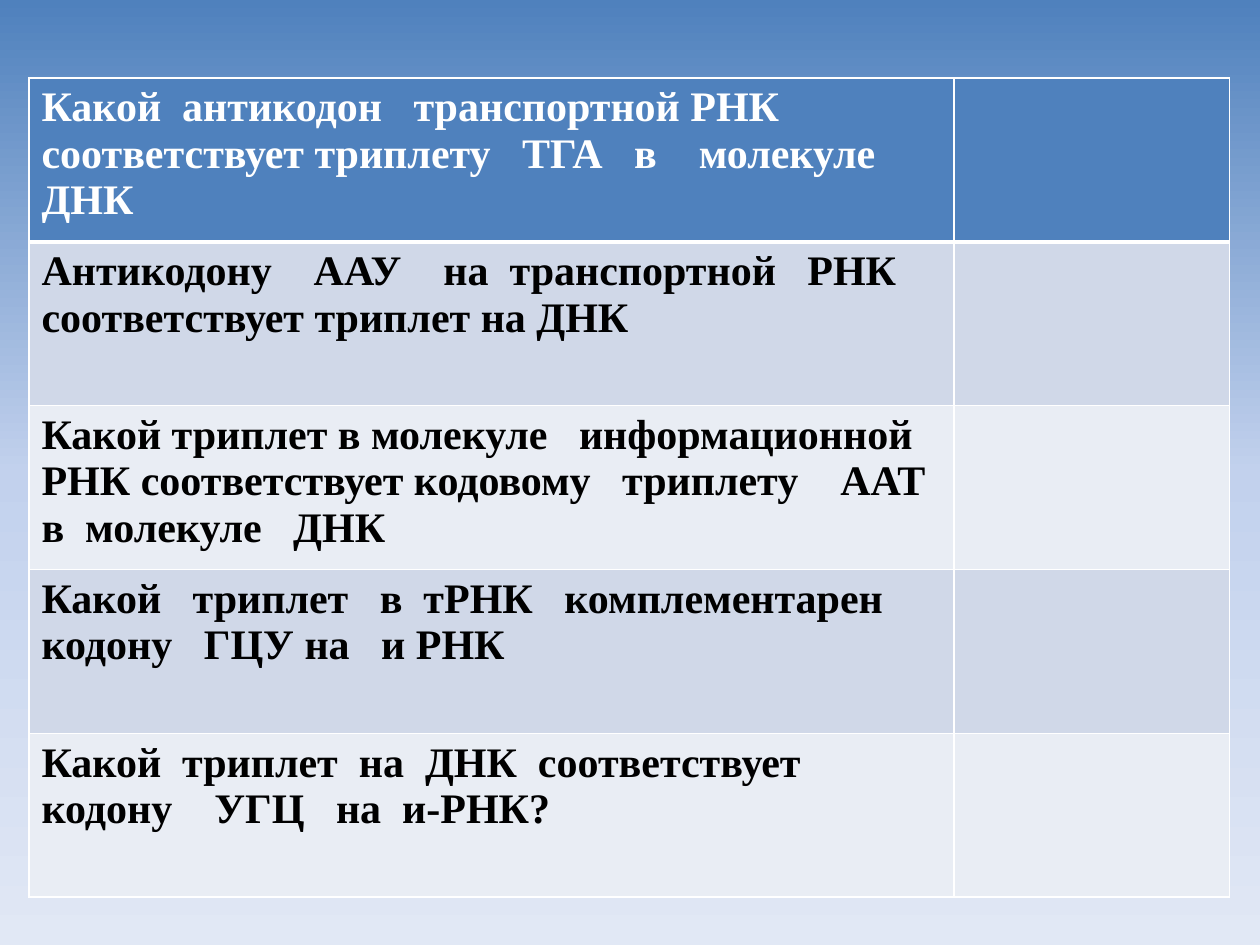
from copy import deepcopy

from lxml.etree import SubElement
from pptx import Presentation
from pptx.dml.color import RGBColor
from pptx.oxml.ns import qn
from pptx.util import Inches, Pt

COLORS = {
    "header": "4F81BD",
    "dark_band": "D0D8E8",
    "light_band": "E9EDF4",
    "white": "FFFFFF",
    "black": "000000",
    "sky_middle": "C2D1ED",
    "sky_bottom": "E1E8F5",
}
QUESTIONS = [
    "Какой  антикодон   транспортной РНК соответствует триплету   ТГА   в    молекуле ДНК",
    "Антикодону    ААУ    на  транспортной   РНК соответствует триплет на ДНК",
    "Какой триплет в молекуле   информационной РНК соответствует кодовому   триплету    ААТ в  молекуле   ДНК",
    "Какой   триплет   в  тРНК   комплементарен кодону   ГЦУ на   и РНК",
    "Какой  триплет  на  ДНК  соответствует кодону    УГЦ   на  и-РНК?",
]


class QuizSlide:
    """Style and current slide, with a method for each kind of element."""

    font_name = "Times New Roman"
    font_size = Pt(24)

    def __init__(self, presentation):
        self.width = presentation.slide_width
        self.height = presentation.slide_height
        self.slide = presentation.slides.add_slide(presentation.slide_layouts[6])

    def color(self, name):
        return RGBColor.from_string(COLORS[name])

    def background(self, stops):
        fill = self.slide.background.fill
        fill.gradient()
        fill.gradient_angle = 270
        stop_list = next(self.slide.element.iter(qn("a:gsLst")))
        while len(stop_list) < len(stops):
            stop_list.append(deepcopy(stop_list[0]))
        for stop, (position, name) in zip(fill.gradient_stops, stops):
            stop.position = position
            stop.color.rgb = self.color(name)

    def border(self, cell, sides):
        properties = cell._tc.get_or_add_tcPr()
        for index, (side, points) in enumerate(sides.items()):
            line = SubElement(properties, qn(f"a:ln{side}"), w=str(Pt(points)))
            fill = SubElement(line, qn("a:solidFill"))
            SubElement(fill, qn("a:srgbClr"), val=COLORS["white"])
            properties.insert(index, line)

    def cell_text(self, cell, text, color):
        run = cell.text_frame.paragraphs[0].add_run()
        run.text = text
        run.font.name = self.font_name
        run.font.size = self.font_size
        run.font.bold = True
        run.font.color.rgb = self.color(color)

    def table(self, left, top, column_shares, height, questions):
        frame = self.slide.shapes.add_table(
            len(questions), len(column_shares),
            int(left * self.width), int(top * self.height),
            int(sum(column_shares) * self.width), int(height * self.height),
        )
        table = frame.table
        for column, share in zip(table.columns, column_shares):
            column.width = int(share * self.width)
        for index, (row, question) in enumerate(zip(table.rows, questions)):
            row.height = int(height * self.height / len(questions))
            band = ("light_band", "dark_band")[index % 2] if index else "header"
            sides = {"L": 1, "R": 1, "T": 3 if index == 1 else 1, "B": 1 if index else 3}
            for cell in row.cells:
                cell.fill.solid()
                cell.fill.fore_color.rgb = self.color(band)
                self.border(cell, sides)
            self.cell_text(row.cells[0], question, "black" if index else "white")


def main():
    presentation = Presentation()
    presentation.slide_width = Inches(10)
    presentation.slide_height = Inches(7.5)
    quiz = QuizSlide(presentation)
    quiz.background([(0, "header"), (0.5, "sky_middle"), (1, "sky_bottom")])
    quiz.table(0.023, 0.62 / 7.5, (0.734, 0.219), 6.5 / 7.5, QUESTIONS)
    presentation.save("out.pptx")


if __name__ == "__main__":
    main()
